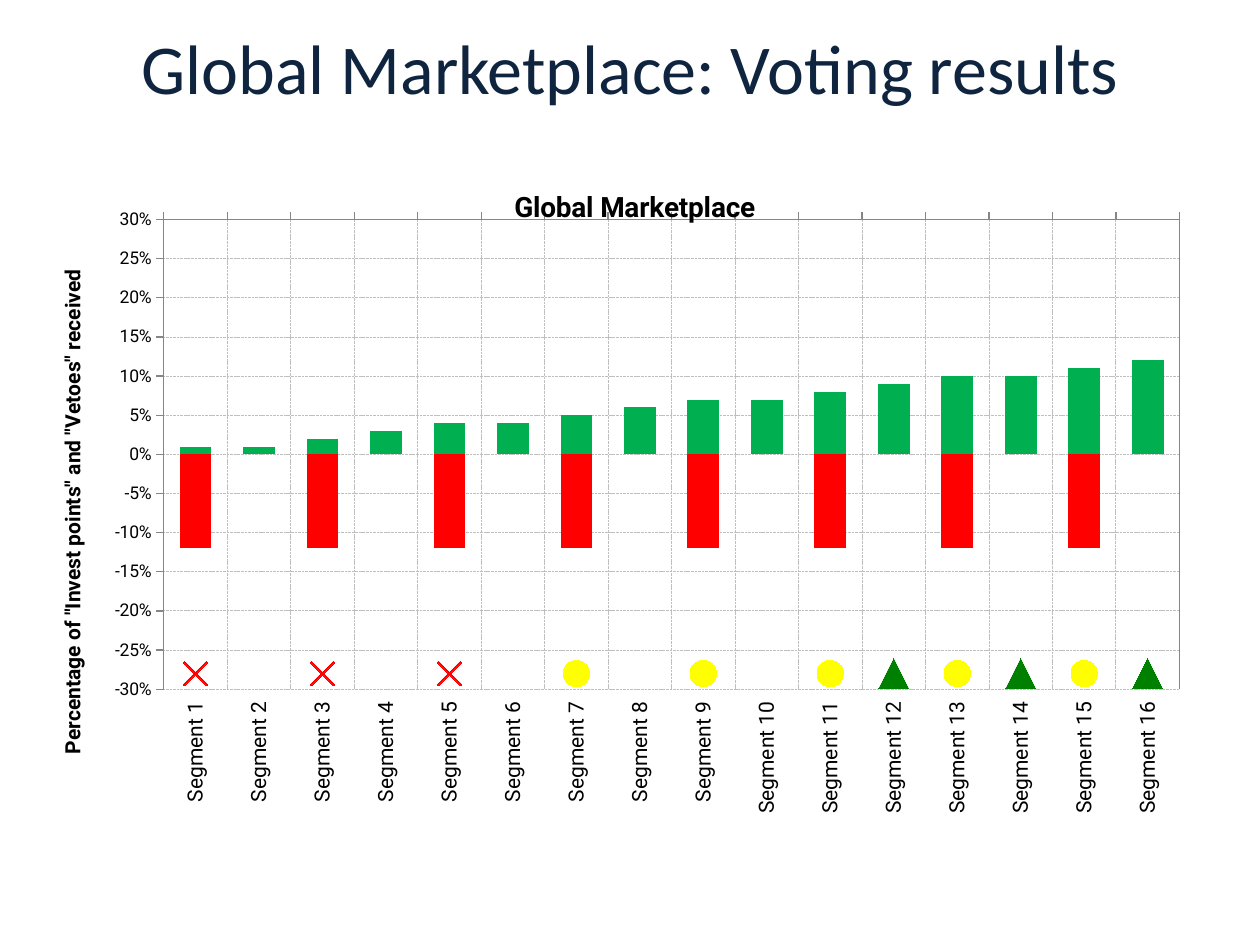
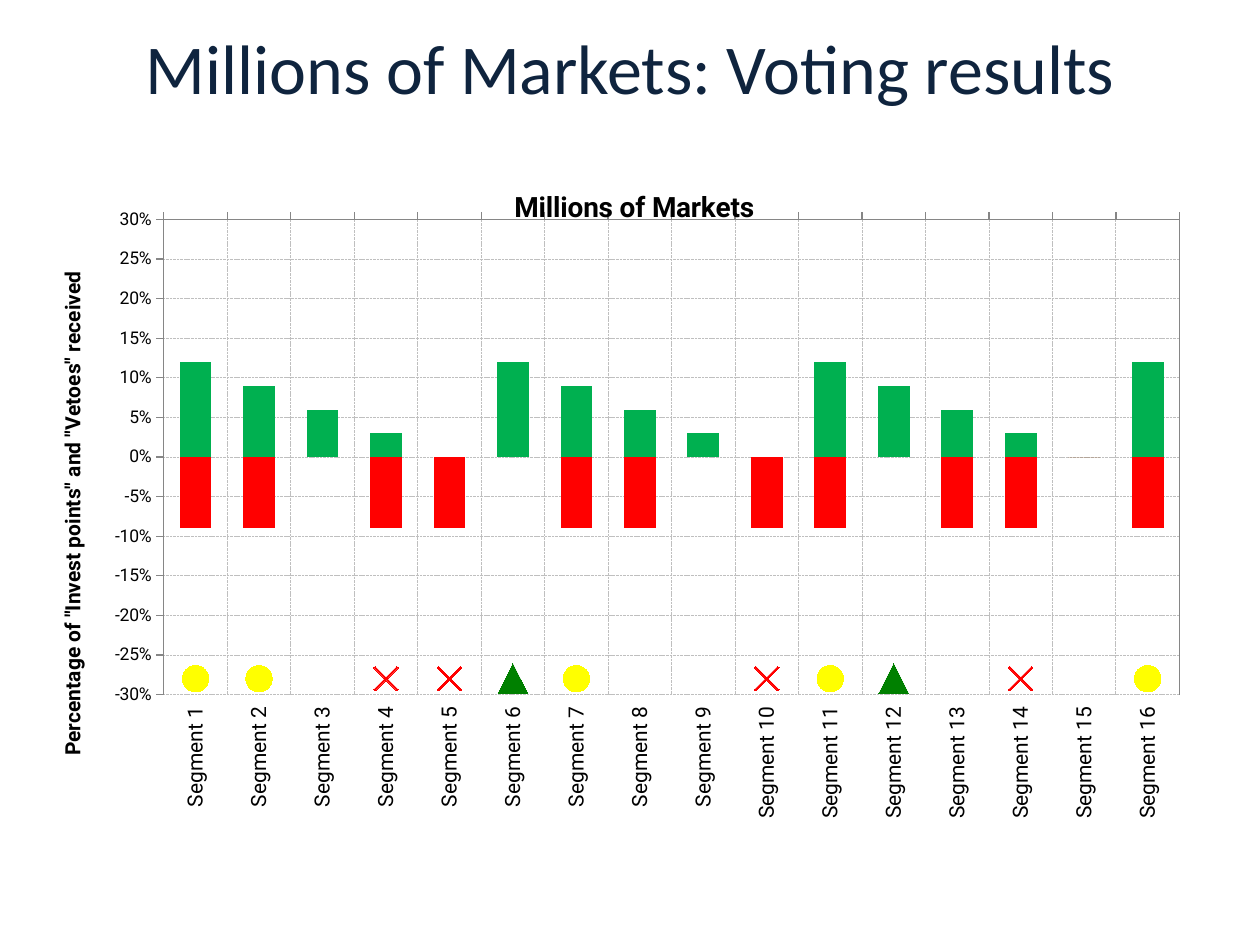
from dataclasses import dataclass
from typing import Optional

from pptx import Presentation
from pptx.chart.chart import Chart
from pptx.chart.data import CategoryChartData
from pptx.dml.color import RGBColor
from pptx.enum.chart import (
    XL_AXIS_CROSSES as Crosses,
    XL_CHART_TYPE as ChartType,
    XL_MARKER_STYLE as MarkerStyle,
    XL_TICK_LABEL_POSITION as LabelPosition,
    XL_TICK_MARK as TickMark,
)
from pptx.enum.dml import MSO_LINE as Dash
from pptx.enum.text import MSO_ANCHOR as Anchor, PP_ALIGN as Align
from pptx.oxml import parse_xml
from pptx.oxml.ns import nsdecls, qn
from pptx.util import Inches, Pt

COLORS = {
    "heading": "0F243E",
    "text": "000000",
    "grid": "BFBFBF",
    "axis": "868686",
    "invest": "00B050",
    "veto": "FF0000",
    "go": "008000",
    "stop": "FF0000",
    "discuss": "FFFF00",
}
HEADING_FONT = "Calibri"
CHART_FONT = "Roboto"
SEGMENTS = [f"Segment {number}" for number in range(1, 17)]
RECEIVED = 'Percentage of "Invest points" and "Vetoes" received'


@dataclass(frozen=True)
class Verdict:
    """A marker shown under the segments that carry its code."""

    code: str
    style: MarkerStyle
    size: int
    color: str
    filled: bool = True


@dataclass(frozen=True)
class Vote:
    """The voting results of one market, with a verdict code per segment."""

    market: str
    invest: tuple[float, ...]
    vetoes: tuple[float, ...]
    verdicts: str
    plot_height: float


VERDICTS = (
    Verdict("t", MarkerStyle.TRIANGLE, 17, "go"),
    Verdict("x", MarkerStyle.X, 14, "stop", filled=False),
    Verdict("o", MarkerStyle.CIRCLE, 15, "discuss"),
)
VOTES = (
    Vote(
        "Global Marketplace",
        (0.01, 0.01, 0.02, 0.03, 0.04, 0.04, 0.05, 0.06,
         0.07, 0.07, 0.08, 0.09, 0.1, 0.1, 0.11, 0.12),
        (-0.12, 0) * 8,
        "x.x.x.o.o.ototot",
        0.71,
    ),
    Vote(
        "Millions of Markets",
        (0.12, 0.09, 0.06, 0.03, 0) * 3 + (0.12,),
        (-0.09, -0.09, 0) * 5 + (-0.09,),
        "oo.xxto..xot.x.o",
        0.72,
    ),
)


def rgb(name: str) -> RGBColor:
    """Return a palette colour."""
    return RGBColor.from_string(COLORS[name])


def style_font(font, size: float, name: str = CHART_FONT, color: str = "text",
               bold: Optional[bool] = None) -> None:
    """Set the face, size, colour and weight of a font."""
    font.name = name
    font.size = Pt(size)
    font.bold = bold
    font.color.rgb = rgb(color)


def style_line(line, color: str, width: float) -> None:
    """Set the colour and width of a line."""
    line.color.rgb = rgb(color)
    line.width = Pt(width)


def add_caption(text_frame, text: str, size: float) -> None:
    """Write a bold chart caption."""
    run = text_frame.paragraphs[0].add_run()
    run.text = text
    style_font(run.font, size, bold=True)


def set_layout(parent, index: int, **fractions: float) -> None:
    """Give a chart part a manual place in fractions of the chart."""
    for layout in parent.findall(qn("c:layout")):
        parent.remove(layout)
    target = '<c:layoutTarget val="inner"/>' if "w" in fractions else ""
    modes = "".join(f'<c:{key}Mode val="edge"/>' for key in "xy")
    sizes = "".join(f'<c:{key} val="{value}"/>' for key, value in fractions.items())
    parent.insert(index, parse_xml(
        f'<c:layout {nsdecls("c")}><c:manualLayout>{target}{modes}{sizes}'
        "</c:manualLayout></c:layout>"))


def style_axes(chart: Chart) -> None:
    """Format the segment axis and the percentage axis."""
    segments, percent = chart.category_axis, chart.value_axis
    for axis, size in ((segments, 12), (percent, 10)):
        axis.major_tick_mark = TickMark.OUTSIDE
        axis.minor_tick_mark = TickMark.NONE
        axis.has_major_gridlines = True
        grid = axis.major_gridlines.format.line
        style_line(grid, "grid", 0.5)
        grid.dash_style = Dash.SQUARE_DOT
        style_line(axis.format.line, "axis", 0.75)
        style_font(axis.tick_labels.font, size)
    segments.tick_label_position = LabelPosition.LOW
    chart.element.xpath(".//c:catAx/c:txPr/a:bodyPr")[0].set("rot", "-5400000")
    percent.crosses = Crosses.MAXIMUM
    percent.minimum_scale, percent.maximum_scale = -0.3, 0.3
    percent.major_unit = 0.05
    percent.tick_labels.number_format = "0%"
    percent.tick_labels.number_format_is_linked = False
    add_caption(percent.axis_title.text_frame, RECEIVED, 12)


def move_verdicts_to_right_axis(chart: Chart) -> None:
    """Turn the series after the first two into lines on a second axis."""
    plot_area = chart.element.xpath(".//c:plotArea")[0]
    columns = plot_area.find(qn("c:barChart"))
    lines = parse_xml(
        f'<c:lineChart {nsdecls("c")}><c:grouping val="standard"/>'
        '<c:varyColors val="0"/><c:marker val="1"/>'
        '<c:axId val="50"/><c:axId val="60"/></c:lineChart>')
    for series in columns.findall(qn("c:ser"))[2:]:
        for invert in series.findall(qn("c:invertIfNegative")):
            series.remove(invert)
        lines.find(qn("c:marker")).addprevious(series)
    columns.addnext(lines)
    hidden_segments = parse_xml(
        f'<c:catAx {nsdecls("c")}><c:axId val="50"/>'
        '<c:scaling><c:orientation val="minMax"/></c:scaling>'
        '<c:delete val="1"/><c:axPos val="b"/><c:crossAx val="60"/>'
        '<c:crosses val="autoZero"/></c:catAx>')
    right = parse_xml(
        f'<c:valAx {nsdecls("c", "a")}><c:axId val="60"/>'
        '<c:scaling><c:orientation val="minMax"/><c:max val="30"/><c:min val="0"/></c:scaling>'
        '<c:delete val="0"/><c:axPos val="r"/><c:numFmt formatCode="General" sourceLinked="0"/>'
        '<c:majorTickMark val="none"/><c:minorTickMark val="none"/><c:tickLblPos val="none"/>'
        f'<c:spPr><a:ln w="9525"><a:solidFill><a:srgbClr val="{COLORS["axis"]}"/>'
        '</a:solidFill></a:ln></c:spPr><c:crossAx val="50"/><c:crosses val="max"/>'
        '<c:crossBetween val="between"/><c:majorUnit val="1"/></c:valAx>')
    last_axis = plot_area.findall(qn("c:valAx"))[-1]
    last_axis.addnext(hidden_segments)
    hidden_segments.addnext(right)


def style_verdict(series, verdict: Verdict) -> None:
    """Show a series as markers without a joining line."""
    series.smooth = False
    series.format.line.fill.background()
    marker = series.marker
    marker.style, marker.size = verdict.style, verdict.size
    style_line(marker.format.line, verdict.color, 1.5 if not verdict.filled else 0.75)
    if verdict.filled:
        marker.format.fill.solid()
        marker.format.fill.fore_color.rgb = rgb(verdict.color)
    else:
        marker.format.fill.background()


def add_vote_chart(slide, vote: Vote) -> None:
    """Draw invest points, vetoes and verdicts for each segment."""
    data = CategoryChartData()
    data.categories = SEGMENTS
    verdict_rows = [[1 if code == verdict.code else -1 for code in vote.verdicts]
                    for verdict in VERDICTS]
    for number, values in enumerate((vote.invest, vote.vetoes, *verdict_rows), 1):
        data.add_series(f"Series {number}", values)
    chart = slide.shapes.add_chart(
        ChartType.COLUMN_STACKED, Inches(0.42), Inches(1.25),
        Inches(9.17), Inches(5.25), data).chart
    style_font(chart.font, 12)
    chart.has_legend = False
    add_caption(chart.chart_title.text_frame, vote.market, 16)
    set_layout(chart.element.xpath("./c:chart/c:title")[0], 1, x=0.395, y=0.04)
    set_layout(chart.element.xpath(".//c:plotArea")[0], 0,
               x=0.096, y=0.094, w=0.879, h=vote.plot_height)
    style_axes(chart)
    move_verdicts_to_right_axis(chart)

    columns, markers = chart.plots
    columns.gap_width, columns.overlap = 100, 100
    columns.vary_by_categories = False
    for series, color in zip(columns.series, ("invest", "veto")):
        series.invert_if_negative = False
        series.format.fill.solid()
        series.format.fill.fore_color.rgb = rgb(color)
    for series, verdict in zip(markers.series, VERDICTS):
        style_verdict(series, verdict)


def set_heading(slide, text: str) -> None:
    """Place and format the slide title."""
    heading = slide.shapes.title
    heading.left, heading.top = Inches(0.5), Inches(0.19)
    heading.width, heading.height = Inches(9), Inches(0.67)
    frame = heading.text_frame
    frame.vertical_anchor = Anchor.MIDDLE
    frame.word_wrap = True
    paragraph = frame.paragraphs[0]
    paragraph.alignment = Align.CENTER
    run = paragraph.add_run()
    run.text = text
    style_font(run.font, 40, HEADING_FONT, "heading")


def main() -> None:
    """Build one slide per vote and save the presentation."""
    deck = Presentation()
    deck.slide_width, deck.slide_height = Inches(10), Inches(7.5)
    for vote in VOTES:
        slide = deck.slides.add_slide(deck.slide_layouts[5])
        set_heading(slide, f"{vote.market}: Voting results")
        add_vote_chart(slide, vote)
    deck.save("out.pptx")


if __name__ == "__main__":
    main()
